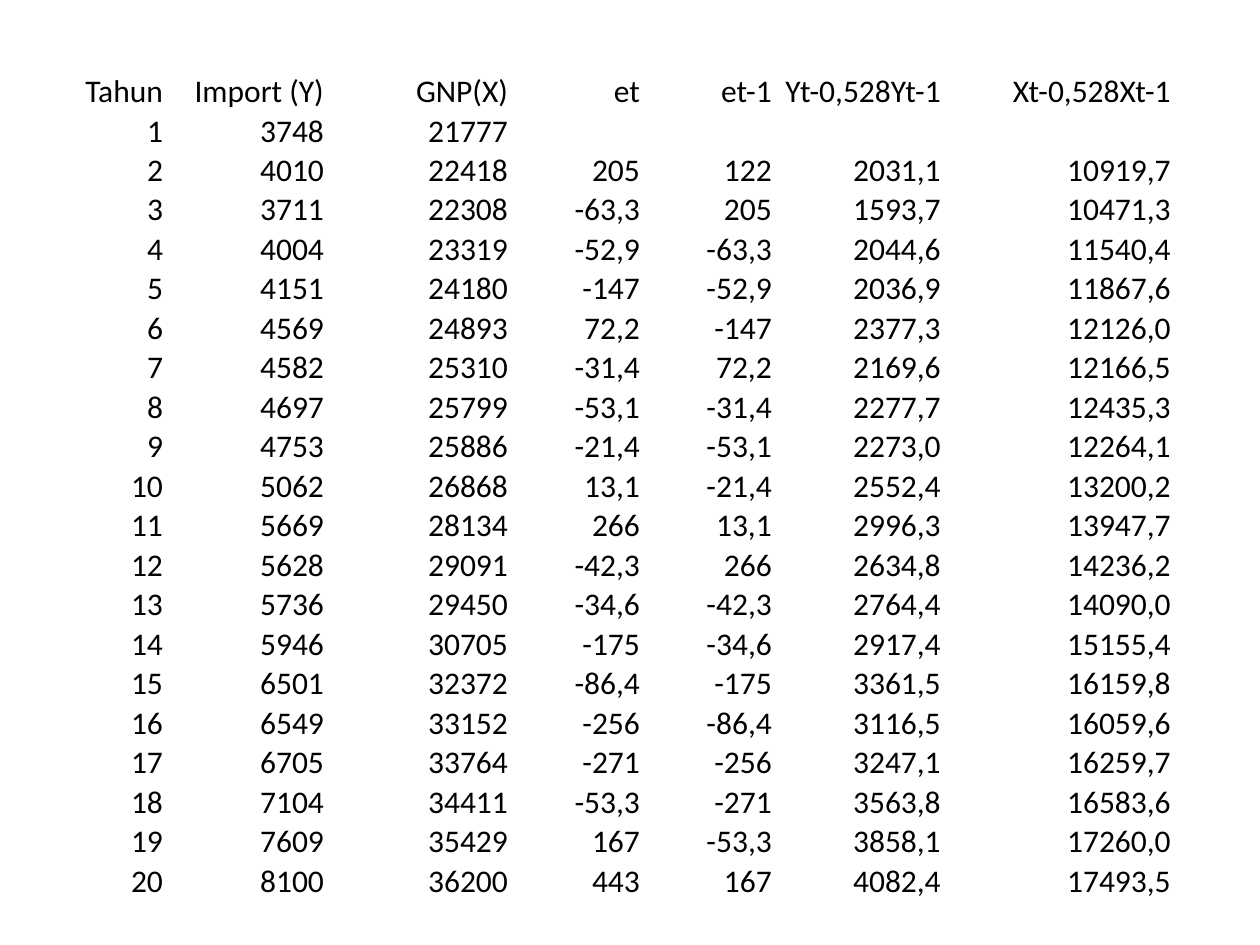
from dataclasses import dataclass

from pptx import Presentation
from pptx import util as u
from pptx.dml import color
from pptx.enum import text

PX = 914400 // 126


@dataclass(frozen=True)
class Theme:
    font: str = "Calibri"
    size: int = 18
    ink: str = "000000"
    paper: str = "FFFFFF"


class Deck:
    def __init__(self, prs, theme):
        self.theme = theme
        self.s = prs.slides.add_slide(prs.slide_layouts[6])
        fill = self.s.background.fill
        fill.solid()
        fill.fore_color.rgb = color.RGBColor.from_string(theme.paper)

    def cell(self, cell, value):
        cell.fill.background()
        cell.vertical_anchor = text.MSO_ANCHOR.BOTTOM
        cell.margin_left = cell.margin_right = cell.margin_top = PX
        cell.margin_bottom = 0
        p = cell.text_frame.paragraphs[0]
        p.text = value
        p.alignment = text.PP_ALIGN.RIGHT
        for r in p.runs:
            r.font.name = self.theme.font
            r.font.size = u.Pt(self.theme.size)
            r.font.color.rgb = color.RGBColor.from_string(self.theme.ink)

    def table(self, x, y, height, widths, head_height, row_height, rows):
        frame = self.s.shapes.add_table(
            len(rows), len(widths), x * PX, y * PX, sum(widths) * PX, height * PX)
        tbl = frame.table
        tbl.first_row = tbl.horz_banding = False
        for col, width in zip(tbl.columns, widths):
            col.width = width * PX
        for i, values in enumerate(rows):
            tbl.rows[i].height = (row_height if i else head_height) * PX
            for j, value in enumerate(values):
                self.cell(tbl.cell(i, j), value)
        frame.height = height * PX


HEADER = ["Tahun", "Import (Y)", "GNP(X)", "et", "et-1", "Yt-0,528Yt-1", "Xt-0,528Xt-1"]
FIRST_YEAR = ["1", "3748", "21777", "", "", "", ""]
FIRST_LAG = "122"
YEARS = [
    ("4010", "22418", "205", "2031,1", "10919,7"),
    ("3711", "22308", "-63,3", "1593,7", "10471,3"),
    ("4004", "23319", "-52,9", "2044,6", "11540,4"),
    ("4151", "24180", "-147", "2036,9", "11867,6"),
    ("4569", "24893", "72,2", "2377,3", "12126,0"),
    ("4582", "25310", "-31,4", "2169,6", "12166,5"),
    ("4697", "25799", "-53,1", "2277,7", "12435,3"),
    ("4753", "25886", "-21,4", "2273,0", "12264,1"),
    ("5062", "26868", "13,1", "2552,4", "13200,2"),
    ("5669", "28134", "266", "2996,3", "13947,7"),
    ("5628", "29091", "-42,3", "2634,8", "14236,2"),
    ("5736", "29450", "-34,6", "2764,4", "14090,0"),
    ("5946", "30705", "-175", "2917,4", "15155,4"),
    ("6501", "32372", "-86,4", "3361,5", "16159,8"),
    ("6549", "33152", "-256", "3116,5", "16059,6"),
    ("6705", "33764", "-271", "3247,1", "16259,7"),
    ("7104", "34411", "-53,3", "3563,8", "16583,6"),
    ("7609", "35429", "167", "3858,1", "17260,0"),
    ("8100", "36200", "443", "4082,4", "17493,5"),
]


def table_rows():
    rows = [HEADER, FIRST_YEAR]
    lag = FIRST_LAG
    for year, (imports, gnp, residual, y_diff, x_diff) in enumerate(YEARS, 2):
        rows.append([str(year), imports, gnp, residual, lag, y_diff, x_diff])
        lag = residual
    return rows


def main():
    prs = Presentation()
    prs.slide_width, prs.slide_height = u.Inches(10), u.Inches(7.5)
    deck = Deck(prs, Theme())
    deck.table(59, 49, 844, [105, 161, 184, 132, 132, 169, 230], 62, 33, table_rows())
    prs.save("out.pptx")


if __name__ == "__main__":
    main()
